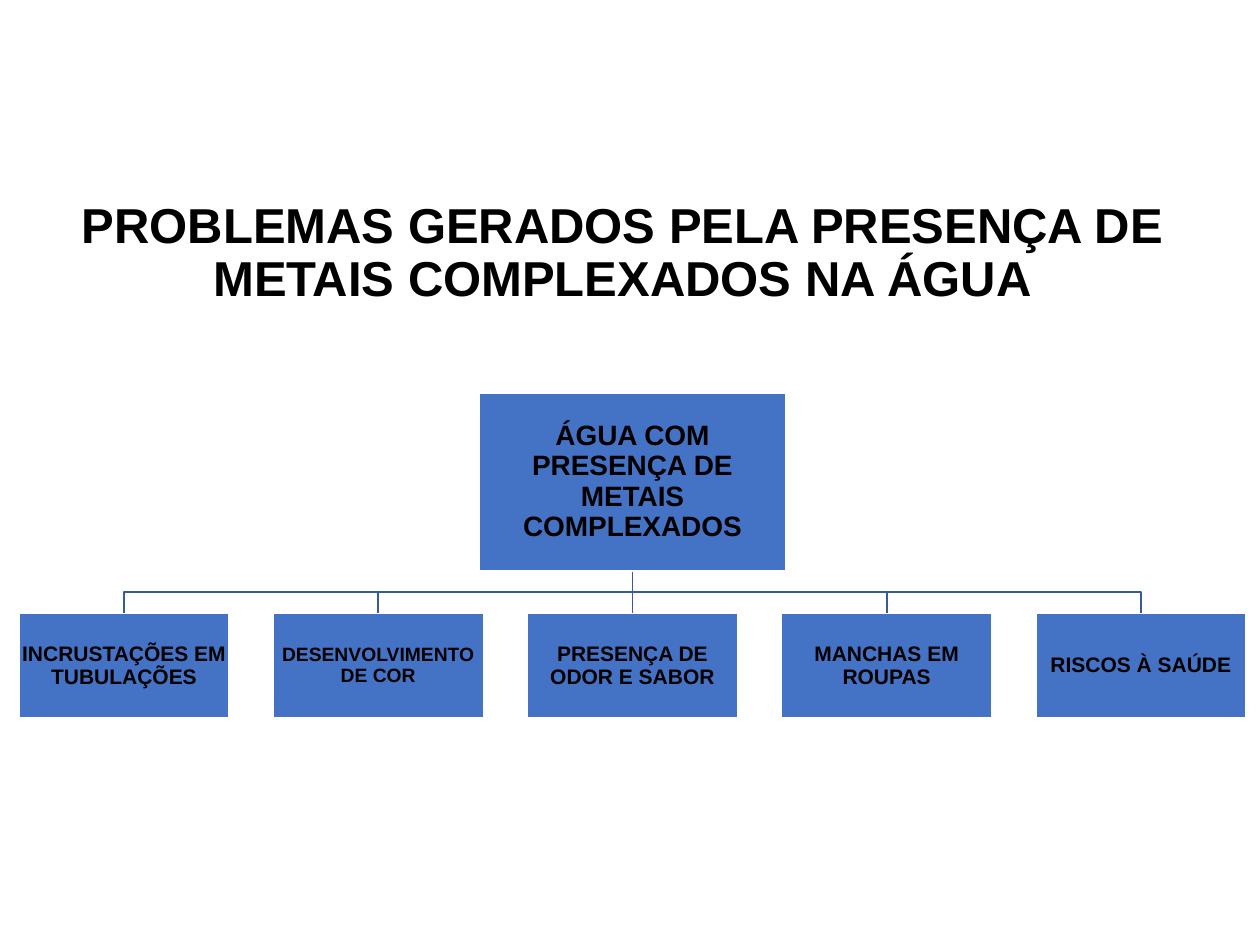
import pptx
import pptx.util
import pptx.dml.color
import pptx.enum.shapes
import pptx.enum.text
import pptx.oxml.ns
import lxml.etree

Inches = pptx.util.Inches
Pt = pptx.util.Pt
RGB = pptx.dml.color.RGBColor.from_string
Anchor = pptx.enum.text.MSO_ANCHOR

COLORS = {"text": "000000", "fill": "4472C4", "edge": "FFFFFF", "wire": "365B9D"}
TITLE = "PROBLEMAS GERADOS PELA PRESENÇA DE METAIS COMPLEXADOS NA ÁGUA"
ROOT = "ÁGUA COM PRESENÇA DE METAIS COMPLEXADOS"
LEAVES = [
    ("INCRUSTAÇÕES EM TUBULAÇÕES", 12),
    ("DESENVOLVIMENTO DE COR", 11),
    ("PRESENÇA DE ODOR E SABOR", 12),
    ("MANCHAS EM ROUPAS", 12),
    ("RISCOS À SAÚDE", 12),
]


def apply(item, values):
    for name, value in values.items():
        setattr(item, name, value)


def write(shape, text, size, frame):
    body = shape.text_frame
    apply(body, {"text": text, "word_wrap": True, **frame})
    line = body.paragraphs[0]
    apply(line, {"alignment": pptx.enum.text.PP_ALIGN.CENTER, "line_spacing": 0.9})
    font = line.runs[0].font
    apply(font, {"name": "Arial", "size": Pt(size), "bold": True})
    font.color.rgb = RGB(COLORS["text"])


def stroke(shape, color):
    shape.line.color.rgb = RGB(COLORS[color])
    shape.line.width = Pt(1)


def add_title(slide, left, top, width, height):
    title = slide.shapes.title
    apply(title, {"left": left, "top": top, "width": width, "height": height})
    write(title, TITLE, 28, {
        "auto_size": pptx.enum.text.MSO_AUTO_SIZE.NONE,
        "vertical_anchor": Anchor.TOP,
        "margin_top": 0,
    })


def add_box(slide, text, size, left, top, width, height):
    box = slide.shapes.add_shape(
        pptx.enum.shapes.MSO_SHAPE.RECTANGLE, left, top, width, height)
    box.shadow.inherit = False
    box.fill.solid()
    box.fill.fore_color.rgb = RGB(COLORS["fill"])
    stroke(box, "edge")
    sides = ("left", "top", "right", "bottom")
    frame = {f"margin_{side}": Inches(0.01) for side in sides}
    write(box, text, size, {"vertical_anchor": Anchor.MIDDLE, **frame})
    return box


def add_elbow(slide, start, end, top, low):
    mid = (top + low) // 2
    pen = slide.shapes.build_freeform(start, top)
    pen.add_line_segments([(start, mid), (end, mid), (end, low)], close=False)
    wire = pen.convert_to_shape()
    wire.shadow.inherit = False
    wire.fill.background()
    stroke(wire, "wire")


def add_stem(slide, mid, top, low):
    stem = slide.shapes.add_connector(
        pptx.enum.shapes.MSO_CONNECTOR.STRAIGHT, mid, top, mid, low)
    stroke(stem, "wire")
    lxml.etree.SubElement(
        stem.line._get_or_add_ln().getparent(), pptx.oxml.ns.qn("a:effectLst"))
    return stem


def add_tree(slide, left, top, width, height):
    root_w, root_h = Inches(2.43), Inches(1.41)
    leaf_w, leaf_h = Inches(1.67), Inches(0.83)
    mid = left + width // 2
    base, row = top + root_h, top + height - leaf_h
    step = (width - leaf_w) // (len(LEAVES) - 1)
    lefts = [left + i * step for i in range(len(LEAVES))]
    center = len(LEAVES) // 2
    for i, x in enumerate(lefts):
        if i != center:
            add_elbow(slide, mid, x + leaf_w // 2, base, row)
    stem = add_stem(slide, mid, base, row)
    root = add_box(slide, ROOT, 16, mid - root_w // 2, top, root_w, root_h)
    boxes = [add_box(slide, text, size, x, row, leaf_w, leaf_h)
             for x, (text, size) in zip(lefts, LEAVES)]
    stem.begin_connect(root, 2)
    stem.end_connect(boxes[center], 0)


def main():
    deck = pptx.Presentation()
    apply(deck, {"slide_width": Inches(10), "slide_height": Inches(7.5)})
    slide = deck.slides.add_slide(deck.slide_layouts[5])
    add_title(slide, Inches(0), Inches(1.6), Inches(9.88), Inches(1.18))
    add_tree(slide, Inches(0.15), Inches(3.12), Inches(9.74), Inches(2.58))
    deck.save("out.pptx")


if __name__ == "__main__":
    main()
